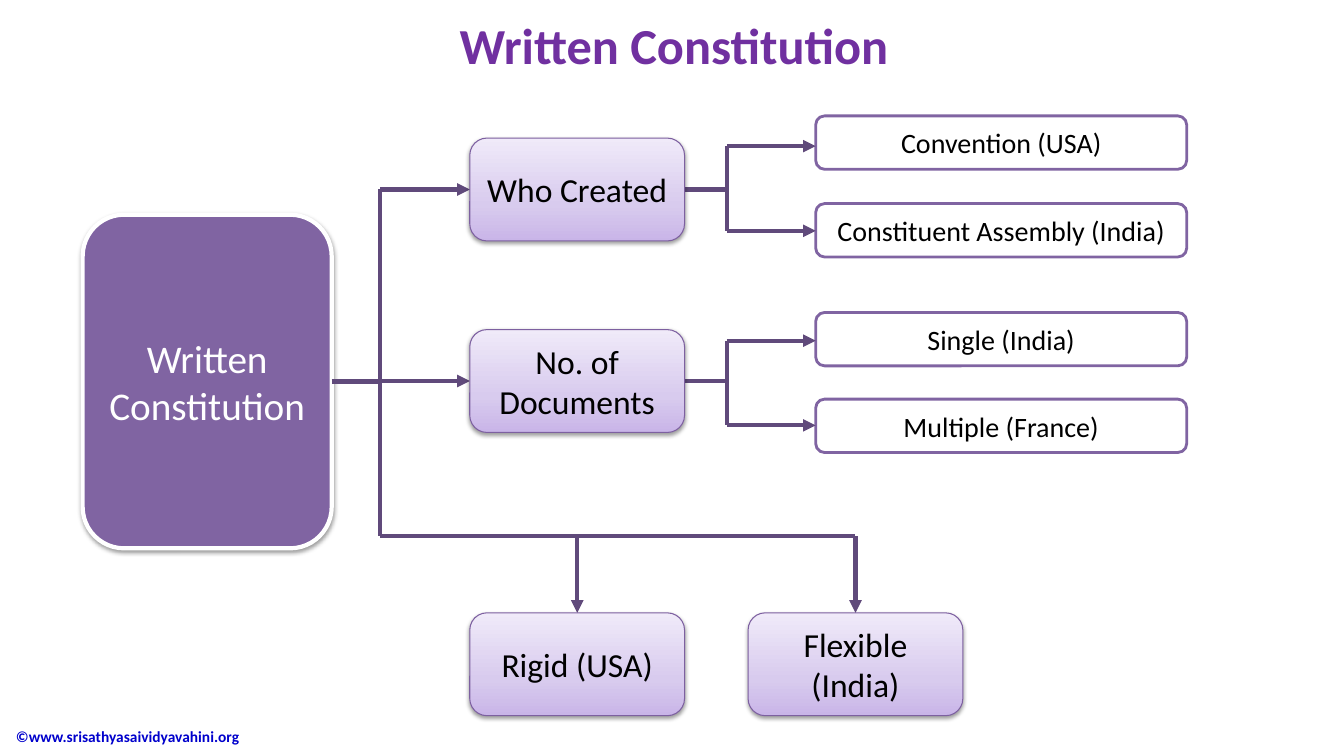
from lxml import etree
from pptx import Presentation
from pptx.dml.color import RGBColor
from pptx.enum.shapes import MSO_CONNECTOR, MSO_SHAPE
from pptx.enum.text import MSO_ANCHOR, PP_ALIGN
from pptx.oxml import parse_xml
from pptx.oxml.ns import nsdecls, qn
from pptx.util import Inches, Pt

TITLE = "Written Constitution"
ROOT = "Written Constitution"
CREDIT = "©www.srisathyasaividyavahini.org"

# Branch: text, top, then leaves as (text, top, arrow height)
BRANCHES = [
    ("Who Created", 1.37, [("Convention (USA)", 1.15, 1.45),
                           ("Constituent Assembly (India)", 2.02, 2.29)]),
    ("No. of Documents", 3.27, [("Single (India)", 3.10, 3.38),
                                ("Multiple (France)", 3.96, 4.22)]),
]
NATURES = [("Rigid (USA)", 4.66), ("Flexible (India)", 7.42)]  # text, left

PURPLE, DARK, EDGE = "8064A2", "604A7B", "7D60A0"
GRADIENT = [(0, "C9B5E8"), (35, "D8CBEE"), (100, "F0EAF9")]

ROOT_BOX = (0.82, 2.13, 2.47, 3.31)
BOX_W, BOX_H = 2.13, 1.02
LEAF_W, LEAF_H = 3.68, 0.53
TRUNK_X, BOX_X, FORK_X, LEAF_X = 3.77, 4.66, 7.21, 8.09
RAIL_Y, NATURE_Y = 5.32, 6.08


def rgb(value):
    return RGBColor.from_string(value)


def write(tf, text, size, color="000000", bold=False, align=PP_ALIGN.CENTER):
    tf.word_wrap = True
    tf.vertical_anchor = MSO_ANCHOR.MIDDLE
    p = tf.paragraphs[0]
    p.alignment = align
    r = p.add_run()
    r.text = text
    r.font.name, r.font.size, r.font.bold = "Calibri", Pt(size), bold
    r.font.color.rgb = rgb(color)


def add_shadow(sp):
    """Give the shape a soft shadow straight below it."""
    sp._element.spPr.append(parse_xml(
        f'<a:effectLst {nsdecls("a")}><a:outerShdw blurRad="{Pt(3.1)}" dist="{Pt(1.6)}" '
        'dir="5400000" rotWithShape="0"><a:srgbClr val="000000"><a:alpha val="38000"/>'
        '</a:srgbClr></a:outerShdw></a:effectLst>'))


def add_gradient(sp):
    """Fill the shape from the bottom up with the three gradient stops."""
    stops = "".join(f'<a:gs pos="{pos * 1000}"><a:srgbClr val="{c}"/></a:gs>'
                    for pos, c in GRADIENT)
    sp._element.spPr.find(qn("a:prstGeom")).addnext(parse_xml(
        f'<a:gradFill {nsdecls("a")} rotWithShape="1"><a:gsLst>{stops}</a:gsLst>'
        '<a:lin ang="16200000" scaled="1"/></a:gradFill>'))


def add_box(slide, box, text, size, line, width, fill=None, color="000000", shadow=True):
    """Add a rounded box; without a fill colour it gets the gradient."""
    sp = slide.shapes.add_shape(MSO_SHAPE.ROUNDED_RECTANGLE, *map(Inches, box))
    sp.line.color.rgb, sp.line.width = rgb(line), Pt(width)
    if fill:
        sp.fill.solid()
        sp.fill.fore_color.rgb = rgb(fill)
    else:
        add_gradient(sp)
    if shadow:
        add_shadow(sp)
    else:
        sp.shadow.inherit = False
    write(sp.text_frame, text, size, color)


def add_line(slide, x1, y1, x2, y2, arrow=False):
    c = slide.shapes.add_connector(MSO_CONNECTOR.STRAIGHT, *map(Inches, (x1, y1, x2, y2)))
    c.line.color.rgb, c.line.width = rgb(DARK), Pt(3)
    if arrow:
        etree.SubElement(c.line._get_or_add_ln(), qn("a:tailEnd"), type="triangle")
    etree.SubElement(c._element.spPr, qn("a:effectLst"))


def add_branch(slide, text, top, leaves):
    mid = top + BOX_H / 2
    add_line(slide, TRUNK_X, mid, BOX_X, mid, arrow=True)
    add_line(slide, BOX_X + BOX_W, mid, FORK_X, mid)
    add_line(slide, FORK_X, leaves[0][2], FORK_X, leaves[-1][2])
    add_box(slide, (BOX_X, top, BOX_W, BOX_H), text, 24, EDGE, 0.75)
    for leaf, leaf_top, y in leaves:
        add_box(slide, (LEAF_X, leaf_top, LEAF_W, LEAF_H), leaf, 20, PURPLE, 2,
                fill="FFFFFF", shadow=False)
        add_line(slide, FORK_X, y, LEAF_X, y, arrow=True)


def main():
    prs = Presentation()
    prs.slide_width, prs.slide_height = Inches(13.33), Inches(7.5)
    slide = prs.slides.add_slide(prs.slide_layouts[5])

    title = slide.shapes.title
    title.left, title.top, title.width, title.height = map(Inches, (1.6, 0.08, 10.17, 0.72))
    write(title.text_frame, TITLE, 36, "7030A0", bold=True)

    credit = slide.shapes.add_textbox(*map(Inches, (0.06, 7.1, 3.53, 0.41)))
    write(credit.text_frame, CREDIT, 11, "0000CC", bold=True, align=PP_ALIGN.LEFT)

    add_box(slide, ROOT_BOX, ROOT, 28, "FFFFFF", 3, fill=PURPLE, color="FFFFFF")
    root_y = ROOT_BOX[1] + ROOT_BOX[3] / 2
    add_line(slide, ROOT_BOX[0] + ROOT_BOX[2], root_y, TRUNK_X, root_y)
    add_line(slide, TRUNK_X, BRANCHES[0][1] + BOX_H / 2, TRUNK_X, RAIL_Y)
    add_line(slide, TRUNK_X, RAIL_Y, NATURES[-1][1] + BOX_W / 2, RAIL_Y)

    for branch in BRANCHES:
        add_branch(slide, *branch)
    for text, left in NATURES:
        mid = left + BOX_W / 2
        add_line(slide, mid, RAIL_Y, mid, NATURE_Y, arrow=True)
        add_box(slide, (left, NATURE_Y, BOX_W, BOX_H), text, 24, EDGE, 0.75)

    prs.save("out.pptx")


if __name__ == "__main__":
    main()
